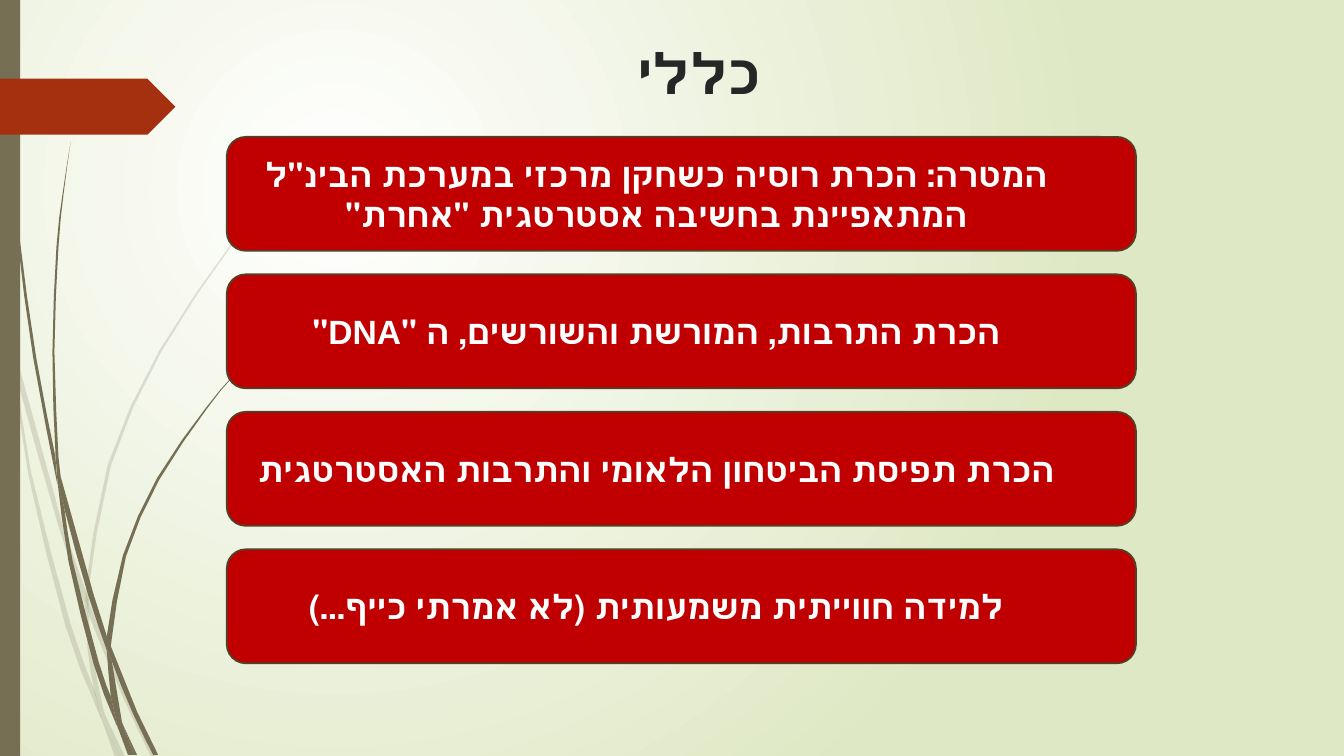
"""Build the overview slide: a title, four goal bars and a grass decoration."""
from lxml.etree import SubElement
from pptx import Presentation
from pptx.dml.color import RGBColor
from pptx.enum.shapes import MSO_SHAPE as Preset
from pptx.enum.text import MSO_ANCHOR as Anchor, PP_ALIGN as Align
from pptx.oxml.ns import qn
from pptx.util import Pt

WHITE = RGBColor(0xFF, 0xFF, 0xFF)
PALE_GREEN = RGBColor(0xDF, 0xE8, 0xC4)
OLIVE = RGBColor(0x76, 0x6F, 0x54)
RUST = RGBColor(0xA5, 0x30, 0x10)
RED = RGBColor(0xC0, 0x00, 0x00)
DARK_OLIVE = RGBColor(0x50, 0x42, 0x28)
CHARCOAL = RGBColor(0x26, 0x26, 0x26)

GOALS = [
    'המטרה: הכרת רוסיה כשחקן מרכזי במערכת הבינ"ל המתאפיינת בחשיבה אסטרטגית "אחרת"',
    'הכרת התרבות, המורשת והשורשים, ה "DNA"',
    'הכרת תפיסת הביטחון הלאומי והתרבות האסטרטגית',
    'למידה חווייתית משמעותית (לא אמרתי כייף...)',
]

GRID = 0.72
LIGHT_BLADES = [
    ([(0, 282), (0, 299), (10, 344), (11, 350)], [(11, 350), (9, 322), (0, 282)]),
    ([(14, 345), (17, 376), (58, 522), (84, 599)], [(85, 586), (62, 520), (14, 345)]),
    ([(88, 596), (88, 610), (123, 694), (150, 751)], [(155, 751), (127, 692), (92, 607), (88, 596)]),
    ([(105, 711), (119, 751)], [(124, 751), (105, 711)]),
    ([(11, 350), (28, 470), (65, 621), (92, 693), (101, 714)],
     [(99, 707), (93, 683), (70, 619), (31, 469), (17, 376), (11, 350)]),
    ([(84, 599), (87, 646), (93, 683), (96, 692), (105, 711)],
     [(103, 706), (91, 646), (88, 610), (84, 599)]),
    ([(312, 153), (268, 197), (228, 244), (158, 348), (107, 461), (85, 584), (88, 596)],
     [(88, 584), (110, 462), (160, 349), (229, 245), (268, 198), (312, 154)]),
    ([(101, 714), (114, 751)], [(119, 751), (101, 714)]),
    ([(85, 586), (84, 599), (88, 608)], [(88, 596), (85, 586)]),
    ([(93, 683), (99, 707), (101, 714), (119, 751)], [(105, 711), (96, 692), (93, 683)]),
]
SOLID_BLADES = [
    ([(3, 0), (7, 110), (17, 233), (33, 355), (57, 481)],
     [(55, 453), (36, 355), (19, 232), (8, 109), (4, 0)]),
    ([(60, 472), (64, 505), (88, 592), (106, 645)], [(106, 631), (93, 590), (60, 472)]),
    ([(110, 641), (111, 656), (132, 708), (152, 749)], [(157, 749), (136, 706), (110, 641)]),
    ([(57, 477), (68, 557), (93, 659), (111, 708), (117, 722)],
     [(110, 691), (98, 657), (72, 556), (64, 505), (57, 477)]),
    ([(70, 141), (62, 193), (56, 245), (52, 349), (55, 449), (60, 472)],
     [(58, 453), (54, 349), (58, 245), (63, 193), (70, 141)]),
    ([(122, 719), (133, 749)], [(136, 749), (122, 719)]),
    ([(55, 449), (57, 477), (64, 505)], [(60, 472), (55, 449)]),
    ([(260, 344), (231, 373), (204, 405), (156, 474), (122, 551), (106, 631), (110, 641)],
     [(111, 633), (125, 552), (158, 476), (205, 406), (231, 374), (261, 344)]),
    ([(117, 722), (127, 749)], [(131, 749), (117, 722)]),
    ([(106, 645), (110, 691), (116, 706), (122, 719)], [(121, 716), (111, 656), (106, 645)]),
    ([(106, 631), (106, 645), (111, 656)], [(110, 641), (106, 631)]),
    ([(110, 691), (117, 722), (130, 749)], [(133, 749), (122, 719), (110, 691)]),
]


def smooth_edge(knots):
    """Return the knots and the curve points midway between them, in slide units."""
    padded = [knots[0], *knots, knots[-1]]
    points = []
    for before, start, end, after in zip(padded, padded[1:], padded[2:], padded[3:]):
        points.append(start)
        if len(knots) > 3:
            points.append(tuple((9 * (b + c) - a - d) / 16
                                for a, b, c, d in zip(before, start, end, after)))
    return [(Pt(GRID * x), Pt(GRID * y)) for x, y in points + [knots[-1]]]


def format_text(text_frame, size, color):
    """Centre right-to-left bold text in the middle of its frame."""
    text_frame.vertical_anchor = Anchor.MIDDLE
    text_frame.word_wrap = True
    paragraph = text_frame.paragraphs[0]
    paragraph.alignment = Align.CENTER
    paragraph._p.get_or_add_pPr().set("rtl", "1")
    font = paragraph.runs[0].font
    font.size, font.bold, font.name = Pt(size), True, "Arial"
    font.color.rgb = color


presentation = Presentation()
presentation.slide_width, presentation.slide_height = Pt(960), Pt(540)
slide = presentation.slides.add_slide(presentation.slide_layouts[5])
shapes = slide.shapes

background = slide.background.fill
background.gradient()
for stop, color in zip(background.gradient_stops, (WHITE, PALE_GREEN)):
    stop.color.rgb = color
gradient = slide.element.find(".//" + qn("a:gradFill"))
gradient.remove(gradient.find(qn("a:lin")))
circle = SubElement(gradient, qn("a:path"), path="circle")
SubElement(circle, qn("a:fillToRect"), l="50000", t="50000", r="100000", b="100000")

for opacity, blades in [(20, LIGHT_BLADES), (100, SOLID_BLADES)]:
    for left_edge, right_edge in blades:
        outline = smooth_edge(left_edge) + smooth_edge(right_edge)
        builder = shapes.build_freeform(*outline[0])
        builder.add_line_segments(outline[1:], close=True)
        blade = builder.convert_to_shape()
        blade.shadow.inherit = False
        blade.fill.solid()
        blade.fill.fore_color.rgb = OLIVE
        blade.line.fill.background()
        blade_color = blade._element.spPr.find(".//" + qn("a:srgbClr"))
        SubElement(blade_color, qn("a:alpha"), val=str(opacity * 1000))

for preset, top, width, height, color in [
    (Preset.RECTANGLE, 0, 14.4, 540, OLIVE),
    (Preset.PENTAGON, 56.2, 125.3, 40, RUST),
]:
    shape = shapes.add_shape(preset, 0, Pt(top), Pt(width), Pt(height))
    shape.shadow.inherit = False
    shape.fill.solid()
    shape.fill.fore_color.rgb = color
    shape.line.fill.background()

title = shapes.title
title.left, title.top, title.width, title.height = Pt(221.8), Pt(20.2), Pt(555), Pt(62)
title.text_frame.text = "כללי"
format_text(title.text_frame, 40, CHARCOAL)

for index, goal in enumerate(GOALS):
    bar = shapes.add_shape(
        Preset.ROUNDED_RECTANGLE, Pt(162), Pt(97.8 + index * 98.2), Pt(649.4), Pt(81.4))
    bar.shadow.inherit = False
    bar.fill.solid()
    bar.fill.fore_color.rgb = RED
    bar.line.color.rgb = DARK_OLIVE
    bar.line.width = Pt(1.25)
    text_frame = bar.text_frame
    text_frame.margin_left = text_frame.margin_right = 0
    text_frame.text = goal
    format_text(text_frame, 24, WHITE)
    paragraph = text_frame.paragraphs[0]
    paragraph.level = 1
    properties = paragraph._p.get_or_add_pPr()
    properties.set("marL", str(Pt(36)))
    properties.set("indent", "0")

presentation.save("out.pptx")
